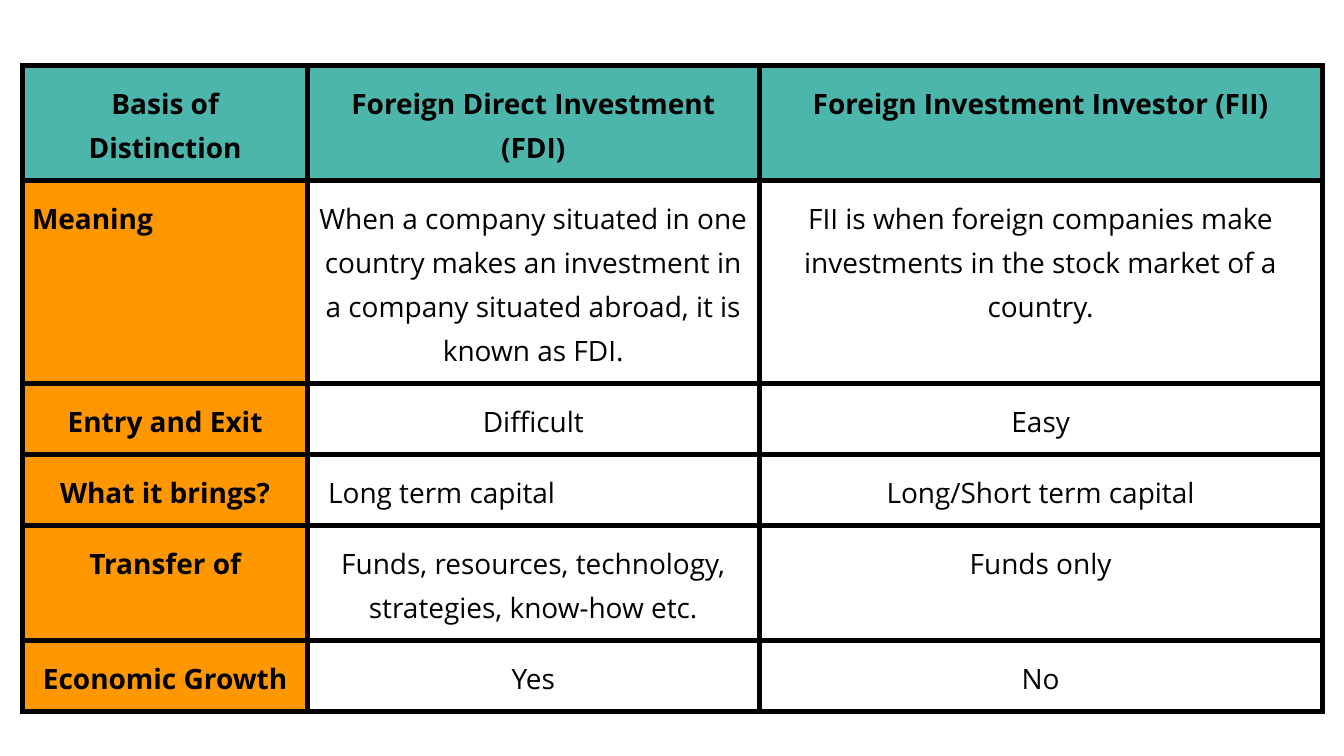
from lxml import etree
from pptx import Presentation
from pptx.dml.color import RGBColor
from pptx.enum.text import MSO_ANCHOR, PP_ALIGN
from pptx.oxml.ns import qn
from pptx.util import Pt

CENTER, LEFT = PP_ALIGN.CENTER, PP_ALIGN.LEFT
TOP = MSO_ANCHOR.TOP

BLACK, TEAL, ORANGE = "000000", "4DB6AC", "FF9800"
BORDER_WIDTH = 3
TABLE_LEFT, TABLE_TOP = 12.2, 35
COLUMN_WIDTHS = [152.6, 241.9, 301.7]
LINE_HEIGHT, ROW_PADDING = 23.5, 14.4
CELL_FORMAT = {
    "margin_left": Pt(5), "margin_right": Pt(5),
    "margin_top": Pt(7.2), "margin_bottom": Pt(7.2),
    "vertical_anchor": TOP,
}
PARAGRAPH_FORMAT = {"line_spacing": 1.15, "space_before": Pt(12)}
FONT_FORMAT = {"name": "Open Sans", "size": Pt(15)}

# Number of text lines in the row, then its three cells
COMPARISON = [
    (2, ["Basis of Distinction", "Foreign Direct Investment (FDI)",
         "Foreign Investment Investor (FII)"]),
    (4, ["Meaning",
         "When a company situated in one country makes an investment in "
         "a company situated abroad, it is known as FDI.",
         "FII is when foreign companies make investments in the stock "
         "market of a country."]),
    (1, ["Entry and Exit", "Difficult", "Easy"]),
    (1, ["What it brings?", "Long term capital", "Long/Short term capital"]),
    (2, ["Transfer of",
         "Funds, resources, technology, strategies, know-how etc.",
         "Funds only"]),
    (1, ["Economic Growth", "Yes", "No"]),
]
# Left margin of the cells that are not centred
LEFT_ALIGNED = {"Meaning": 5, "Long term capital": 11}


def color(hex_value):
    return RGBColor.from_string(hex_value)


def apply_format(target, values):
    for attribute, value in values.items():
        setattr(target, attribute, value)


def add_borders(cell):
    properties = cell._tc.get_or_add_tcPr()
    for side in ("a:lnL", "a:lnR", "a:lnT", "a:lnB"):
        line = etree.SubElement(properties, qn(side), w=str(Pt(BORDER_WIDTH)))
        fill = etree.SubElement(line, qn("a:solidFill"))
        etree.SubElement(fill, qn("a:srgbClr"), val=BLACK)


def fill_cell(cell, fill_color):
    if fill_color:
        cell.fill.solid()
        cell.fill.fore_color.rgb = color(fill_color)
    else:
        cell.fill.background()


def write_cell(cell, text, bold):
    apply_format(cell, CELL_FORMAT)
    paragraph = cell.text_frame.paragraphs[0]
    apply_format(paragraph, PARAGRAPH_FORMAT)
    paragraph.alignment = CENTER
    if text in LEFT_ALIGNED:
        paragraph.alignment = LEFT
        cell.margin_left = Pt(LEFT_ALIGNED[text])
    run = paragraph.add_run()
    run.text = text
    apply_format(run.font, {**FONT_FORMAT, "bold": bold})
    run.font.color.rgb = color(BLACK)


def add_comparison_table(slide):
    heights = [lines * LINE_HEIGHT + ROW_PADDING for lines, _ in COMPARISON]
    table = slide.shapes.add_table(
        len(heights), len(COLUMN_WIDTHS), Pt(TABLE_LEFT), Pt(TABLE_TOP),
        Pt(sum(COLUMN_WIDTHS)), Pt(sum(heights))).table
    apply_format(table, {"first_row": False, "horz_banding": False})
    for column, width in zip(table.columns, COLUMN_WIDTHS):
        column.width = Pt(width)
    for row_index, (_, texts) in enumerate(COMPARISON):
        table.rows[row_index].height = Pt(heights[row_index])
        for column_index, text in enumerate(texts):
            cell = table.cell(row_index, column_index)
            if row_index == 0:
                fill_color = TEAL
            else:
                fill_color = ORANGE if column_index == 0 else None
            add_borders(cell)
            fill_cell(cell, fill_color)
            write_cell(cell, text, bold=fill_color is not None)


def main():
    presentation = Presentation()
    presentation.slide_width, presentation.slide_height = Pt(720), Pt(405)
    blank_layout = presentation.slide_layouts[6]
    add_comparison_table(presentation.slides.add_slide(blank_layout))
    presentation.save("out.pptx")


if __name__ == "__main__":
    main()
